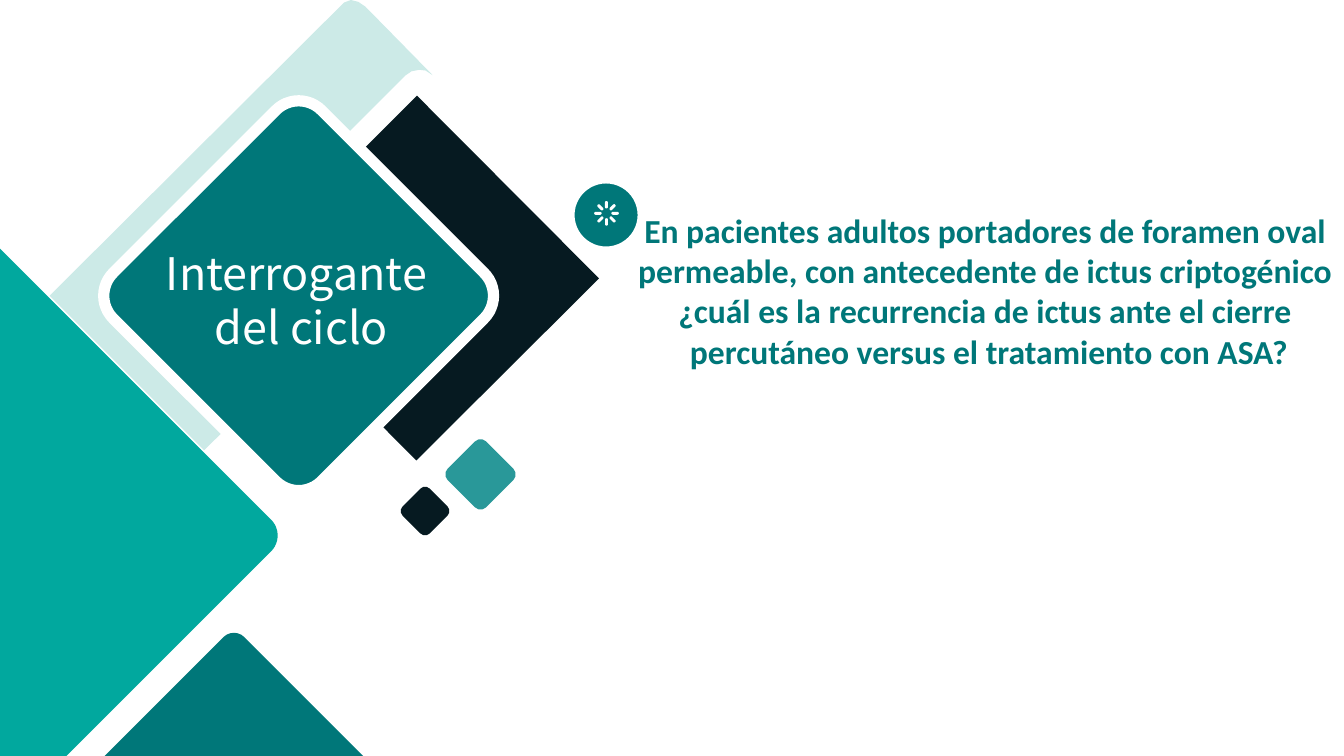
"""Build the slide that states the clinical question of the cycle."""
from math import cos, radians, sin

from pptx import Presentation
from pptx.dml.color import RGBColor
from pptx.enum.shapes import MSO_SHAPE
from pptx.enum.text import MSO_ANCHOR, MSO_AUTO_SIZE, PP_ALIGN
from pptx.util import Pt

ROUND, OVAL = MSO_SHAPE.ROUNDED_RECTANGLE, MSO_SHAPE.OVAL
RECT = MSO_SHAPE.RECTANGLE
TOP, MID = MSO_ANCHOR.TOP, MSO_ANCHOR.MIDDLE
CENTER, FIXED = PP_ALIGN.CENTER, MSO_AUTO_SIZE.NONE
TEAL, DARK, WHITE = "007779", "061A21", "FFFFFF"


def paint(shape, fill, line=0):
    shape.shadow.inherit = False
    shape.fill.solid()
    shape.fill.fore_color.rgb = RGBColor.from_string(fill)
    if line:
        shape.line.color.rgb = RGBColor.from_string(WHITE)
        shape.line.width = Pt(line)
    else:
        shape.line.fill.background()


def write(shape, text, box, size, font, color, bold=False, anchor=TOP):
    shape.left, shape.top, shape.width, shape.height = map(Pt, box)
    frame = shape.text_frame
    frame.text = text
    frame.auto_size, frame.word_wrap = FIXED, False
    frame.vertical_anchor = anchor
    frame.margin_left = frame.margin_right = 0
    frame.margin_top = frame.margin_bottom = 0
    for para in frame.paragraphs:
        para.alignment, para.line_spacing = CENTER, 1.0
        for run in para.runs:
            run.font.size, run.font.name, run.font.bold = Pt(size), font, bold
            run.font.color.rgb = RGBColor.from_string(color)


deck = Presentation()
deck.slide_width, deck.slide_height = Pt(720), Pt(405)
slide = deck.slides.add_slide(deck.slide_layouts[5])
shapes = slide.shapes

disc = shapes.add_shape(OVAL, Pt(306.7), Pt(97.2), Pt(36), Pt(36))
paint(disc, TEAL, 2.25)
for turn in range(0, 360, 45):
    x = 324.9 + 4.6 * sin(radians(turn))
    y = 114.3 - 4.6 * cos(radians(turn))
    ray = shapes.add_shape(ROUND, Pt(x - 0.8), Pt(y - 2), Pt(1.6), Pt(4))
    ray.adjustments[0] = 0.5
    ray.rotation = turn
    paint(ray, WHITE)

query = """En pacientes adultos portadores de foramen oval 
permeable, con antecedente de ictus criptogénico 
¿cuál es la recurrencia de ictus ante el cierre 
percutáneo versus el tratamiento con ASA?"""
write(shapes.add_textbox(0, 0, 0, 0), query, (363.6, 101.5, 332.6, 108),
      18, "Calibri", TEAL, bold=True, anchor=MID)

block = shapes.add_shape(RECT, Pt(154.1), Pt(79.9), Pt(138.2), Pt(138.2))
block.rotation = 45.1
paint(block, DARK)

edge = [
    (26.6, 158.4), (184.3, 1.4), (188, 0), (192, 1), (195.8, 3.6),
    (231.8, 40.3), (228, 37.8), (224.6, 37.4), (220.5, 38.2), (217.4, 40.3),
    (185, 72.7), (171.4, 58.3), (166, 55), (159.8, 54), (153.5, 55),
    (148.3, 58.3), (60.5, 146.9), (57, 152), (56.2, 158.4), (57, 164),
    (60.5, 169.2), (121, 229.7), (109.4, 241.2),
]
dots = [(Pt(x), Pt(y)) for x, y in edge]
pen = shapes.build_freeform(*dots[0])
pen.add_line_segments(dots[1:])
paint(pen.convert_to_shape(), "CCEAE7")

gems = [
    (-16, 286.9, 240, 12, "01A89E", 0),
    (125.3, 436.5, 142.5, 7.9, TEAL, 0),
    (227.7, 273.8, 20.5, 3.5, DARK, 0),
    (257.4, 254.2, 29.2, 4.3, "299899", 0),
    (160, 158.4, 157.8, 17.3, TEAL, 6),
]
for x, y, side, curve, fill, line in gems:
    gem = shapes.add_shape(ROUND, Pt(x - side / 2), Pt(y - side / 2), Pt(side), Pt(side))
    gem.adjustments[0] = curve / side
    gem.rotation = 45
    paint(gem, fill, line)

title = shapes.title
write(title, "Interrogante\n del ciclo", (78.8, 131.8, 160, 60),
      24, "Noto Sans CJK SC", WHITE)
shapes._spTree.append(title._element)

deck.save("out.pptx")
